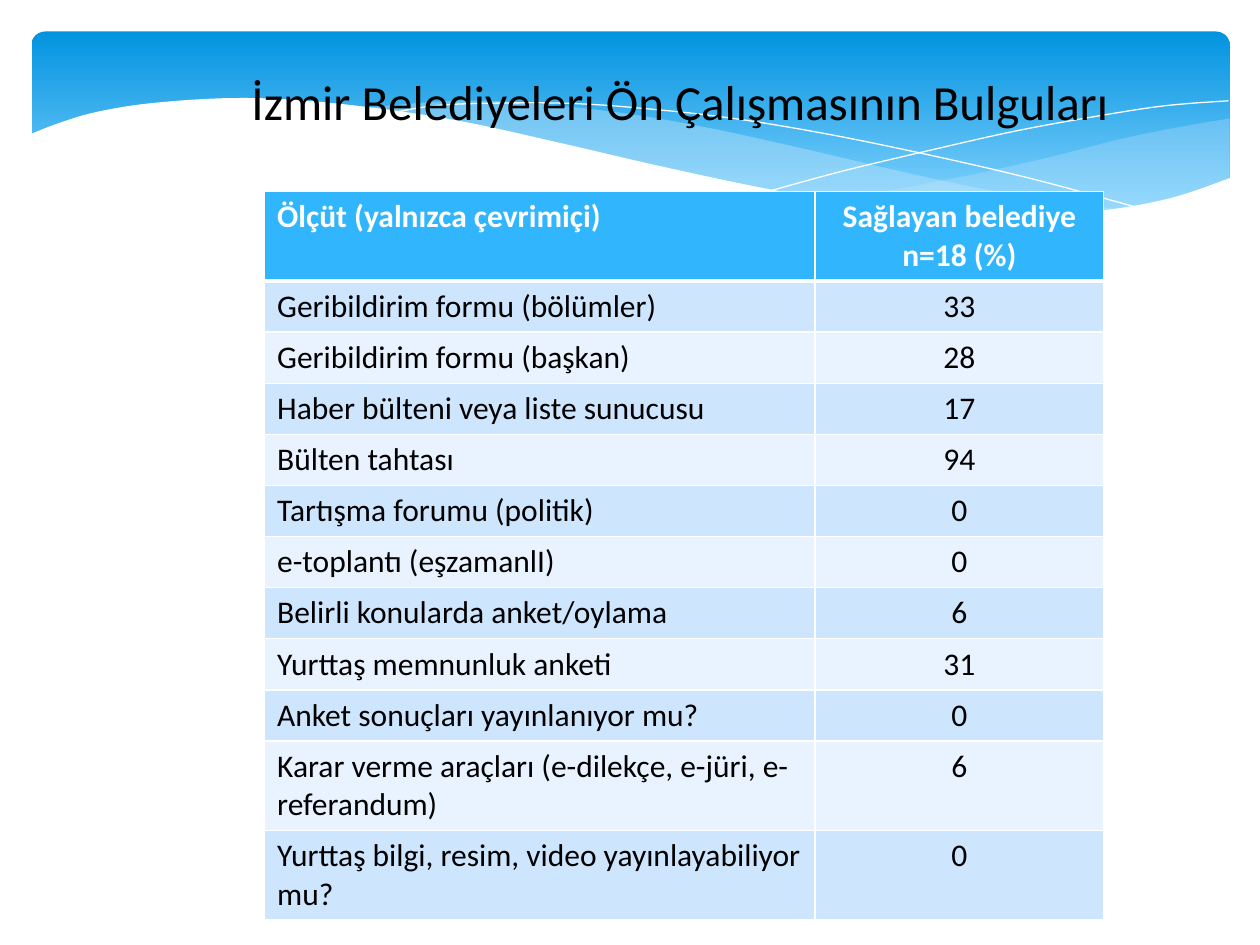
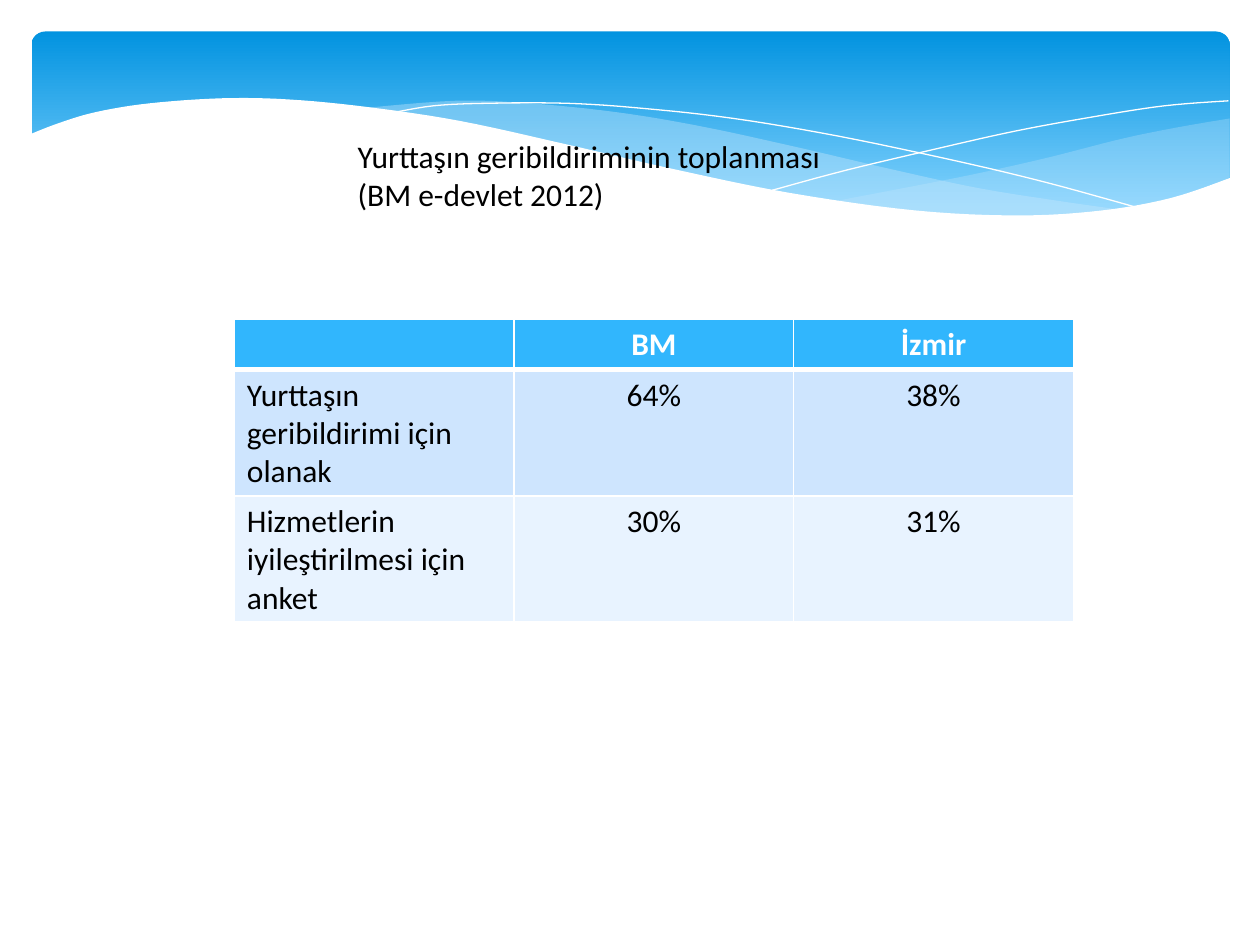
from dataclasses import dataclass

from lxml import etree
from pptx import Presentation
from pptx import util as u
from pptx.dml.color import RGBColor
from pptx.enum import shapes, text
from pptx.oxml.ns import qn


@dataclass(frozen=True)
class Theme:
    font: str = "Calibri"
    title: int = 28
    body: int = 18
    ink: str = "000000"
    paper: str = "FFFFFF"
    sky_top: str = "0293E0"
    sky_bottom: str = "83D3FE"
    mist: str = "C6E7FC"
    header: str = "31B6FD"
    bands: tuple = ("CEE5FE", "E8F3FF")
    rule: int = 1
    header_rule: int = 3


T = Theme()
COLS = 100
WIDTH, HEIGHT = u.Inches(10), u.Inches(7.5)
LINE_ROW, TWO_LINE_ROW, THREE_LINE_ROW = 4.05, 7, 10

RIGHT_MIST = [
    [(97.6, 9.4), (93.5, 10.1), (89.1, 11), (83.2, 12.5),
     (77.9, 13.7), (72.9, 14.7), (66.1, 16)],
    [(66.1, 16), (71.9, 16.7), (76.9, 17.1), (81.4, 17.2), (85.4, 17.1),
     (89.7, 16.5), (93.5, 15.6), (97.6, 14.1)],
]
LONG_MIST = [
    [(89.3, 16.7), (83.7, 15.9), (77.5, 14.9), (70.6, 13.4), (62.9, 11.6),
     (55.5, 10), (48.9, 8.9), (42, 8.2), (36.1, 8), (28.6, 8.6)],
    [(28.6, 8.6), (36.2, 9.7), (44.9, 11.6), (53, 13.5), (60.1, 15),
     (68, 16.3), (74.8, 17), (80.7, 17.3), (85.7, 17.1), (89.3, 16.7)],
]
FALLING_LINE = [
    [(30.9, 9), (34.4, 8.4), (38.7, 8.2), (45, 8.2), (51, 8.6), (58.2, 9.4),
     (66.5, 10.8), (76, 12.8), (83.1, 14.5), (90.7, 16.6)],
]
RISING_LINE = [
    [(61.3, 15.1), (67.2, 13.5), (74.8, 11.7), (80.6, 10.4), (86.6, 9.3),
     (92.4, 8.4), (97.5, 8)],
]
WHITE_WAVE = [
    [(97.7, 14.1), (93, 15.7), (87.5, 16.7), (80.9, 17.1), (72.6, 16.7),
     (62.6, 15.3), (52.9, 13.3), (44.7, 11.4), (36.5, 9.6), (29.2, 8.5),
     (23, 7.9), (17.7, 7.8), (11.9, 8.2), (7.6, 8.9), (4.6, 9.8), (2.3, 10.7)],
    [(2.3, 22.4), (97.7, 22.4)],
]

CRITERIA = [
    ("Ölçüt (yalnızca çevrimiçi)", "Sağlayan belediye n=18 (%)"),
    ("Geribildirim formu (bölümler)", "33"),
    ("Geribildirim formu (başkan)", "28"),
    ("Haber bülteni veya liste sunucusu", "17"),
    ("Bülten tahtası", "94"),
    ("Tartışma forumu (politik)", "0"),
    ("e-toplantı (eşzamanlI)", "0"),
    ("Belirli konularda anket/oylama", "6"),
    ("Yurttaş memnunluk anketi", "31"),
    ("Anket sonuçları yayınlanıyor mu?", "0"),
    ("Karar verme araçları (e-dilekçe, e-jüri, e-referandum)", "6"),
    ("Yurttaş bilgi, resim, video yayınlayabiliyor mu?", "0"),
]
COMPARISON = [
    ("", "BM", "İzmir"),
    ("Yurttaşın geribildirimi için olanak", "64%", "38%"),
    ("Hizmetlerin iyileştirilmesi için anket", "30%", "31%"),
]


def cells(n):
    return u.Emu(round(n * WIDTH / COLS))


def rgb(color):
    return RGBColor.from_string(color)


def smooth(points, steps=6):
    padded = [points[0], *points, points[-1]]
    curve = [points[0]]
    for a, b, c, d in zip(padded, padded[1:], padded[2:], padded[3:]):
        for i in range(1, steps + 1):
            t = i / steps
            curve.append(tuple(
                (2 * q + (r - p) * t + (2 * p - 5 * q + 4 * r - s) * t ** 2
                 + (3 * q - p - 3 * r + s) * t ** 3) / 2
                for p, q, r, s in zip(a, b, c, d)))
    return curve


def add_curve(slide, edges, close):
    points = [(cells(x), cells(y))
              for edge in edges
              for x, y in (smooth(edge) if len(edge) > 2 else edge)]
    builder = slide.shapes.build_freeform(*points[0], scale=1.0)
    builder.add_line_segments(points[1:], close=close)
    sp = builder.convert_to_shape()
    sp.shadow.inherit = False
    return sp


def add_wave(slide, edges, color, opacity=100):
    sp = add_curve(slide, edges, True)
    sp.fill.solid()
    sp.fill.fore_color.rgb = rgb(color)
    sp.line.fill.background()
    if opacity < 100:
        clr = sp.fill._xPr.find(qn("a:solidFill"))[0]
        etree.SubElement(clr, qn("a:alpha"), val=str(opacity * 1000))


def add_hairline(slide, edges):
    sp = add_curve(slide, edges, False)
    sp.fill.background()
    sp.line.color.rgb = rgb(T.paper)
    sp.line.width = u.Pt(0)


def add_sky(slide):
    sp = slide.shapes.add_shape(shapes.MSO_SHAPE.ROUNDED_RECTANGLE,
                                cells(2.5), cells(2.5), cells(95.1), cells(15.6))
    sp.adjustments[0] = 0.07
    sp.shadow.inherit = False
    sp.line.fill.background()
    sp.fill.gradient()
    sp.fill.gradient_angle = 270
    stops = zip(sp.fill.gradient_stops, (T.sky_top, T.sky_bottom), (0, 0.9))
    for stop, color, position in stops:
        stop.color.rgb = rgb(color)
        stop.position = position


def add_banner(slide):
    add_sky(slide)
    add_wave(slide, RIGHT_MIST, T.mist, 29)
    add_wave(slide, LONG_MIST, T.mist, 40)
    add_hairline(slide, FALLING_LINE)
    add_hairline(slide, RISING_LINE)
    add_wave(slide, WHITE_WAVE, T.paper)


def format_text(tf, size, color, align, bold=False):
    for p in tf.paragraphs:
        p.alignment = align
        for r in p.runs:
            r.font.name = T.font
            r.font.size = u.Pt(size)
            r.font.bold = bold
            r.font.color.rgb = rgb(color)


def add_heading(slide, box, heading, size, align):
    tf = slide.shapes.add_textbox(*map(cells, box)).text_frame
    tf.word_wrap = True
    tf.text = heading
    format_text(tf, size, T.ink, align)


def set_borders(cell, top, bottom):
    tcPr = cell._tc.get_or_add_tcPr()
    sides = zip("LRTB", (T.rule, T.rule, top, bottom))
    for i, (side, width) in enumerate(sides):
        ln = etree.Element(qn(f"a:ln{side}"), w=str(u.Pt(width)))
        fill = etree.SubElement(ln, qn("a:solidFill"))
        etree.SubElement(fill, qn("a:srgbClr"), val=T.paper)
        tcPr.insert(i, ln)


def format_cell(cell, row, col):
    head = row == 0
    cell.fill.solid()
    cell.fill.fore_color.rgb = rgb(T.header if head else T.bands[(row - 1) % 2])
    align = text.PP_ALIGN.CENTER if col else text.PP_ALIGN.LEFT
    format_text(cell.text_frame, T.body, T.paper if head else T.ink, align, head)
    set_borders(cell, T.header_rule if row == 1 else T.rule,
                T.header_rule if head else T.rule)


def add_data_table(slide, left, top, widths, heights, rows):
    frame = slide.shapes.add_table(len(rows), len(widths), cells(left), cells(top),
                                   cells(sum(widths)), cells(sum(heights)))
    tbl = frame.table
    for column, width in zip(tbl.columns, widths):
        column.width = cells(width)
    for i, (values, height) in enumerate(zip(rows, heights)):
        tbl.rows[i].height = cells(height)
        for j, value in enumerate(values):
            cell = tbl.cell(i, j)
            cell.text = value
            format_cell(cell, i, j)


def add_slide(prs):
    slide = prs.slides.add_slide(prs.slide_layouts[6])
    add_banner(slide)
    return slide


def main():
    prs = Presentation()
    prs.slide_width, prs.slide_height = WIDTH, HEIGHT

    s = add_slide(prs)
    heights = [TWO_LINE_ROW] + [LINE_ROW] * 9 + [TWO_LINE_ROW] * 2
    add_data_table(s, 21, 15.2, (43.7, 22.9), heights, CRITERIA)
    add_heading(s, (18.6, 5.2, 70.7, 10.4),
                "İzmir Belediyeleri Ön Çalışmasının Bulguları",
                T.title, text.PP_ALIGN.CENTER)

    s = add_slide(prs)
    heights = [LINE_ROW] + [THREE_LINE_ROW] * 2
    add_data_table(s, 18.6, 25.3, [22.2] * 3, heights, COMPARISON)
    add_heading(s, (27.4, 10.4, 69.8, 10.1),
                "Yurttaşın geribildiriminin toplanması\n(BM e-devlet 2012)",
                T.body, text.PP_ALIGN.LEFT)

    prs.save("out.pptx")


if __name__ == "__main__":
    main()
